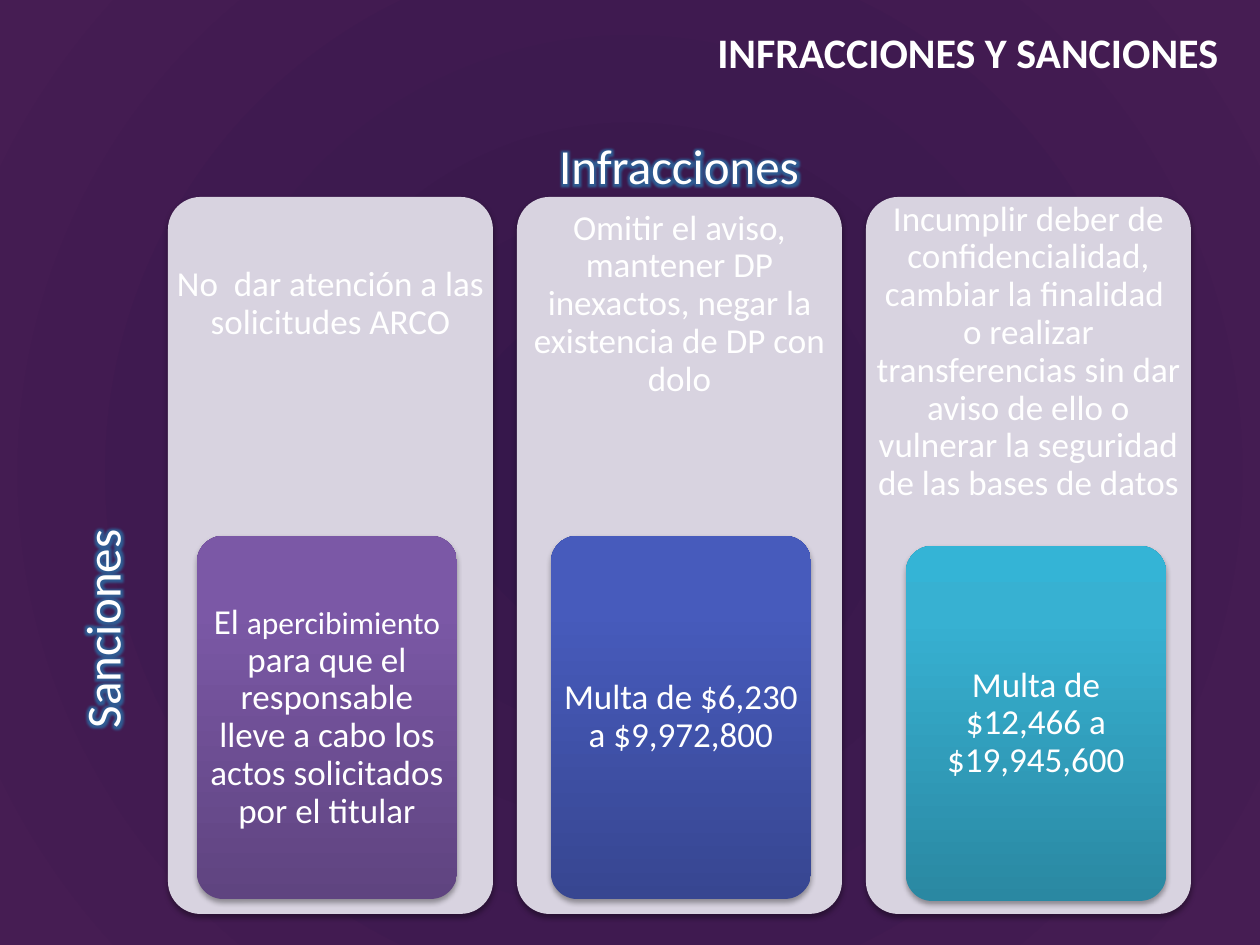
from lxml import etree
from pptx import Presentation
from pptx.dml.color import RGBColor
from pptx.enum.shapes import MSO_SHAPE
from pptx.enum.text import MSO_ANCHOR, MSO_AUTO_SIZE, PP_ALIGN
from pptx.oxml.ns import qn
from pptx.util import Emu, Pt

ROUNDED = MSO_SHAPE.ROUNDED_RECTANGLE
TOP, MIDDLE = MSO_ANCHOR.TOP, MSO_ANCHOR.MIDDLE
CENTER, RIGHT = PP_ALIGN.CENTER, PP_ALIGN.RIGHT
NO_FIT = MSO_AUTO_SIZE.NONE

FONT = "Calibri"
WHITE = RGBColor(0xFF, 0xFF, 0xFF)
PANEL = RGBColor(0xD8, 0xD3, 0xE0)
BLACK = RGBColor(0x00, 0x00, 0x00)
GLOW = RGBColor(0x2E, 0x63, 0x9A)
BG_INNER = RGBColor(0x34, 0x16, 0x4A)
BG_OUTER = RGBColor(0x46, 0x1D, 0x53)
PURPLE = (RGBColor(0x5F, 0x44, 0x80), RGBColor(0x7B, 0x58, 0xA6), RGBColor(0x7C, 0x57, 0xA8))
BLUE = (RGBColor(0x37, 0x46, 0x91), RGBColor(0x47, 0x5B, 0xBC), RGBColor(0x45, 0x5A, 0xBF))
TEAL = (RGBColor(0x2A, 0x88, 0xA2), RGBColor(0x37, 0xB1, 0xD2), RGBColor(0x34, 0xB4, 0xD6))

PANEL_LEFT, PANEL_TOP, PANEL_W, PANEL_H, PANEL_STEP = 168, 197, 325, 717, 349
CARD_W = 260

COLUMNS = [
    (["No  dar atención a las solicitudes ARCO"], (197, 215),
     [("El ", 20), ("apercibimiento", 18),
      (" para que el responsable lleve a cabo los actos solicitados por el titular", 20)],
     (197, 536, 363), PURPLE),
    (["Omitir el aviso, mantener DP inexactos, negar la existencia de DP con dolo"], (197, 215),
     [("Multa de $6,230 a $9,972,800", 20)], (551, 536, 363), BLUE),
    (["Incumplir deber de confidencialidad, cambiar la finalidad  o realizar transferencias "
      "sin dar aviso de ello o vulnerar la seguridad de las bases de datos"], (202, 300),
     [("Multa de $12,466 a $19,945,600", 20)], (906, 546, 355), TEAL),
]


def px(n):
    return Emu(round(n * 914400 / 126))


def color_node(parent, color, alpha=100):
    node = etree.SubElement(parent, qn("a:srgbClr"), val=str(color))
    if alpha < 100:
        etree.SubElement(node, qn("a:alpha"), val=str(alpha * 1000))


def set_gradient(fill, element, stops, radial=False):
    fill.gradient()
    grad = next(element.iter(qn("a:gradFill")))
    for child in list(grad):
        grad.remove(child)
    gs_list = etree.SubElement(grad, qn("a:gsLst"))
    for pos, color in stops:
        color_node(etree.SubElement(gs_list, qn("a:gs"), pos=str(pos * 1000)), color)
    if radial:
        shade = etree.SubElement(grad, qn("a:path"), path="circle")
        etree.SubElement(shade, qn("a:fillToRect"), l="50000", t="50000", r="50000", b="50000")
    else:
        etree.SubElement(grad, qn("a:lin"), ang="16200000", scaled="0")


def add_glow(r):
    effects = etree.Element(qn("a:effectLst"))
    glow = etree.SubElement(effects, qn("a:glow"), rad="101600")
    color_node(glow, GLOW, 90)
    r.font.fill.solid()
    r.font.color.rgb = WHITE
    next(r.font.fill._xPr.iter(qn("a:solidFill"))).addnext(effects)


def write(tf, runs, align=CENTER, anchor=MIDDLE, margin=None, spacing=None, bold=False):
    tf.word_wrap = True
    tf.auto_size = NO_FIT
    tf.vertical_anchor = anchor
    if margin is not None:
        tf.margin_left = tf.margin_right = tf.margin_top = tf.margin_bottom = px(margin)
    p = tf.paragraphs[0]
    p.alignment = align
    p.line_spacing = spacing
    for text, size in runs:
        r = p.add_run()
        r.text = text
        r.font.name = FONT
        r.font.size = Pt(size)
        r.font.bold = bold
        r.font.color.rgb = WHITE
    return p


def add_rounded(s, x, y, w, h):
    sp = s.shapes.add_shape(ROUNDED, px(x), px(y), px(w), px(h))
    sp.adjustments[0] = 0.1
    sp.line.fill.background()
    sp.shadow.inherit = False
    effects = next(sp.element.iter(qn("a:effectLst")))
    shadow = etree.SubElement(effects, qn("a:outerShdw"), blurRad="40000", dist="23000",
                              dir="5400000", rotWithShape="0")
    color_node(shadow, BLACK, 35)
    return sp


def add_panel(s, x, text, text_y, text_h):
    sp = add_rounded(s, x, PANEL_TOP, PANEL_W, PANEL_H)
    sp.fill.solid()
    sp.fill.fore_color.rgb = PANEL
    box = s.shapes.add_textbox(px(x), px(text_y), px(PANEL_W), px(text_h))
    write(box.text_frame, [(text, 20)], margin=9, spacing=0.9)


def add_card(s, x, y, h, runs, colors):
    sp = add_rounded(s, x, y, CARD_W, h)
    set_gradient(sp.fill, sp.element, list(zip((0, 80, 100), colors)))
    write(sp.text_frame, runs, margin=0, spacing=0.9)


def add_heading(s, text, x, y, rotation=0):
    box = s.shapes.add_textbox(px(x), px(y), px(276), px(72))
    box.rotation = rotation
    p = write(box.text_frame, [(text, 28)])
    add_glow(p.runs[0])


def add_title(s, text):
    title = s.shapes.title
    title.left, title.top, title.width, title.height = px(335), px(20), px(896), px(63)
    write(title.text_frame, [(text, 24)], align=RIGHT, anchor=TOP, bold=True)


def main():
    prs = Presentation()
    prs.slide_width, prs.slide_height = px(1260), px(945)
    s = prs.slides.add_slide(prs.slide_layouts[5])
    set_gradient(s.background.fill, s.element, [(0, BG_INNER), (100, BG_OUTER)], radial=True)
    add_title(s, "INFRACCIONES Y SANCIONES")
    for i, (offence, (text_y, text_h), penalty, (x, y, h), colors) in enumerate(COLUMNS):
        add_panel(s, PANEL_LEFT + i * PANEL_STEP, offence[0], text_y, text_h)
        add_card(s, x, y, h, penalty, colors)
    add_heading(s, "Infracciones", 541, 129)
    add_heading(s, "Sanciones", -37, 593, rotation=270)
    prs.save("out.pptx")


if __name__ == "__main__":
    main()
